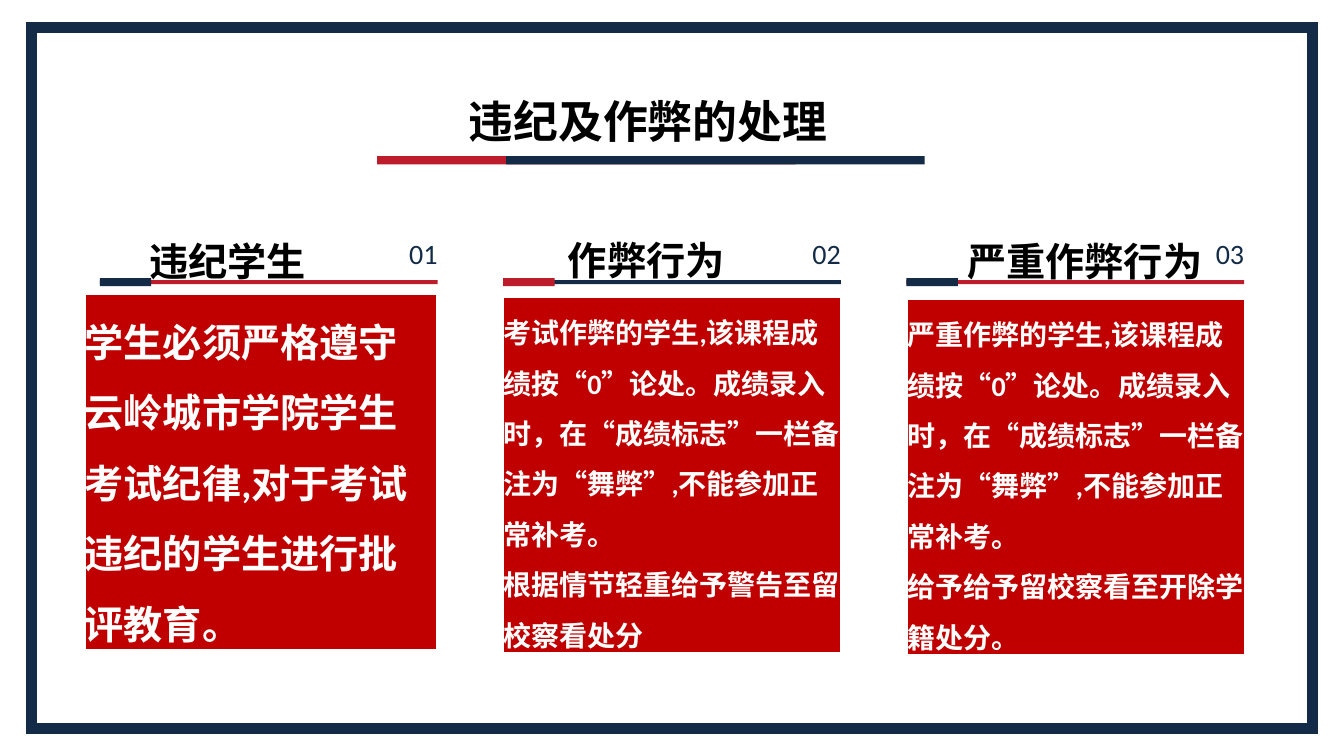
"""Build a slide on how breaches of exam discipline and cheating are handled."""
from lxml.etree import SubElement
from pptx import Presentation
from pptx.dml.color import RGBColor
from pptx.enum.shapes import MSO_SHAPE
from pptx.enum.text import MSO_ANCHOR, PP_ALIGN
from pptx.oxml.ns import qn
from pptx.util import Pt

EMU_PER_PX = 9144
SLIDE_SIZE = (1333, 750)
COLORS = {"navy": "132B47", "red": "BD1C2B", "card": "C00000",
          "white": "FFFFFF", "black": "000000"}
LATIN_FONT = "Calibri"
ASIAN_FONT = "Noto Sans CJK JP"

TITLE = "违纪及作弊的处理"
CHEATING_RULE = ("的学生,该课程成绩按“0”论处。成绩录入时，在“成绩标志”一栏"
                 "备注为“舞弊”,不能参加正常补考。")
COLUMNS = [
    {"heading": "违纪学生", "heading_box": (99, 235, 253, 47),
     "rule": "red", "accent": "navy",
     "card_box": (84, 292, 349, 353), "size": 28, "anchor": MSO_ANCHOR.TOP,
     "body": ["学生必须严格遵守云岭城市学院学生考试纪律,对于考试违纪的学生进行批评教育。"]},
    {"heading": "作弊行为", "heading_box": (530, 234, 222, 47),
     "rule": "navy", "accent": "red",
     "card_box": (499, 295, 335, 353), "size": 20, "anchor": MSO_ANCHOR.MIDDLE,
     "body": ["考试作弊" + CHEATING_RULE, "根据情节轻重给予警告至留校察看处分"]},
    {"heading": "严重作弊行为", "heading_box": (951, 235, 250, 47),
     "rule": "red", "accent": "navy",
     "card_box": (900, 297, 335, 353), "size": 20, "anchor": MSO_ANCHOR.MIDDLE,
     "body": ["严重作弊" + CHEATING_RULE, "给予给予留校察看至开除学籍处分。"]},
]
COLUMN_LEFT, COLUMN_STEP, COLUMN_WIDTH = 99, 400, 335
NUMBER_WIDTH = 82


def emu(box):
    return [value * EMU_PER_PX for value in box]


def color(name):
    return RGBColor.from_string(COLORS[name])


def add_block(slide, box, fill, kind=MSO_SHAPE.RECTANGLE):
    shape = slide.shapes.add_shape(kind, *emu(box))
    shape.shadow.inherit = False
    shape.fill.solid()
    shape.fill.fore_color.rgb = color(fill)
    shape.line.fill.background()
    return shape


def write(shape, lines, size, ink, bold=True, align=PP_ALIGN.LEFT,
          anchor=MSO_ANCHOR.TOP, spacing=None, inset=0, latin=LATIN_FONT):
    frame = shape.text_frame
    frame.word_wrap = True
    frame.vertical_anchor = anchor
    if inset is not None:
        frame.margin_left = frame.margin_right = inset
        frame.margin_top = frame.margin_bottom = inset
    frame.text = "\n".join(lines)
    for paragraph in frame.paragraphs:
        paragraph.alignment = align
        paragraph.line_spacing = spacing
        for run in paragraph.runs:
            run.font.name = latin
            run.font.size = Pt(size)
            run.font.bold = bold
            run.font.color.rgb = color(ink)
            properties = run.font._element
            properties.set("lang", "zh-CN")
            SubElement(properties, qn("a:ea")).set("typeface", ASIAN_FONT)


def add_label(slide, box, text, size, ink, **style):
    write(slide.shapes.add_textbox(*emu(box)), [text], size, ink, **style)


def add_column(slide, index, column):
    left = COLUMN_LEFT + index * COLUMN_STEP
    card = add_block(slide, column["card_box"], "card")
    card.line.color.rgb = color("white")
    card.line.width = Pt(1.5)
    write(card, column["body"], column["size"], "white",
          anchor=column["anchor"], spacing=1.5)
    add_label(slide, column["heading_box"], column["heading"], 28, "black",
              align=PP_ALIGN.CENTER)
    add_block(slide, (left, 278, COLUMN_WIDTH, 4), column["rule"])
    add_block(slide, (left, 276, 51, 8), column["accent"])
    number_left = left + COLUMN_WIDTH - NUMBER_WIDTH
    add_label(slide, (number_left, 235, NUMBER_WIDTH, 34), f"{index + 1:02d}",
              20, "navy", bold=False, align=PP_ALIGN.RIGHT)


def main():
    presentation = Presentation()
    presentation.slide_width, presentation.slide_height = emu(SLIDE_SIZE)
    slide = presentation.slides.add_slide(presentation.slide_layouts[6])
    border = add_block(slide, (26, 22, 1281, 706), "navy", MSO_SHAPE.FRAME)
    border.adjustments[0] = 0.015
    add_label(slide, (455, 88, 424, 64), TITLE, 32, "black",
              align=PP_ALIGN.JUSTIFY, inset=None, latin=ASIAN_FONT)
    add_block(slide, (374, 155, 415, 8), "red")
    add_block(slide, (502, 155, 415, 8), "navy")
    for index, column in enumerate(COLUMNS):
        add_column(slide, index, column)
    presentation.save("out.pptx")


if __name__ == "__main__":
    main()
